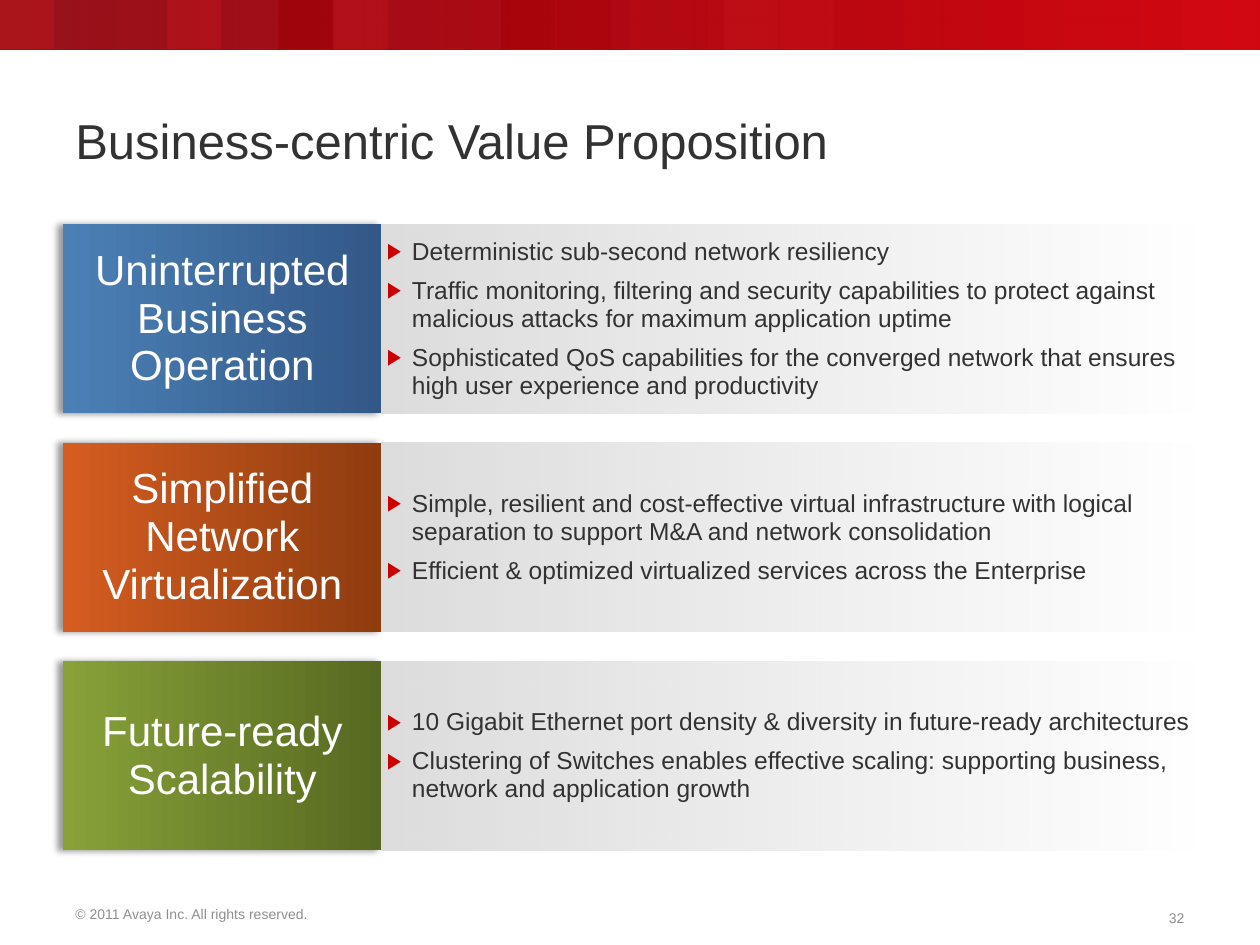
from lxml import etree
from pptx import Presentation
from pptx import util as u
from pptx.dml.color import RGBColor
from pptx.enum import shapes, text
from pptx.oxml import ns

FONT = "Arial"
DARK, GREY, WHITE, PALE = "323232", "8F8F8F", "FFFFFF", "DDDDDD"
BRIGHT_RED, DEEP_RED, BULLET_RED = "FF4747", "990000", "CC0000"

ROWS = [
    ("Uninterrupted Business Operation", "4B80B6", "325887", [
        "Deterministic sub-second network resiliency",
        "Traffic monitoring, filtering and security capabilities to protect against "
        "malicious attacks for maximum application uptime",
        "Sophisticated QoS capabilities for the converged network that ensures "
        "high user experience and productivity"]),
    ("Simplified Network Virtualization", "D55D21", "8F3C0F", [
        "Simple, resilient and cost-effective virtual infrastructure with logical "
        "separation to support M&A and network consolidation",
        "Efficient & optimized virtualized services across the Enterprise"]),
    ("Future-ready Scalability", "87A239", "576820", [
        "10 Gigabit Ethernet port density & diversity in future-ready architectures",
        "Clustering of Switches enables effective scaling: supporting business, "
        "network and application growth"]),
]


def rgb(value):
    return RGBColor.from_string(value)


def add_element(parent, tag, **attributes):
    return etree.SubElement(parent, ns.qn(tag), attributes)


def add_rect(s, box):
    sp = s.shapes.add_shape(shapes.MSO_SHAPE.RECTANGLE, *map(u.Inches, box))
    sp.shadow.inherit = False
    sp.line.fill.background()
    return sp


def solid_rect(s, box, color):
    sp = add_rect(s, box)
    sp.fill.solid()
    sp.fill.fore_color.rgb = rgb(color)


def gradient_rect(s, box, start, end, opacity=(100, 100)):
    sp = add_rect(s, box)
    sp.fill.gradient()
    sp.fill.gradient_angle = 0
    for stop, color, percent in zip(sp.fill.gradient_stops, (start, end), opacity):
        stop.color.rgb = rgb(color)
    for clr, percent in zip(sp._element.spPr.iter(ns.qn("a:srgbClr")), opacity):
        if percent < 100:
            add_element(clr, "a:alpha", val=str(percent * 1000))
    return sp


def add_shadow(sp):
    effects = sp._element.spPr.find(ns.qn("a:effectLst"))
    shadow = add_element(effects, "a:outerShdw", blurRad=str(u.Pt(4)),
                         dist=str(u.Pt(3)), dir="10800000", rotWithShape="0")
    clr = add_element(shadow, "a:srgbClr", val="000000")
    add_element(clr, "a:alpha", val="40000")


def add_bullet(p):
    pPr = p._p.get_or_add_pPr()
    pPr.set("marL", str(u.Inches(0.2)))
    pPr.set("indent", str(u.Inches(-0.2)))
    add_element(add_element(pPr, "a:buClr"), "a:srgbClr", val=BULLET_RED)
    add_element(pPr, "a:buSzPct", val="90000")
    add_element(pPr, "a:buFont", typeface=FONT)
    add_element(pPr, "a:buChar", char="▶")


def write(sp, lines, size, color, align=text.PP_ALIGN.LEFT, spacing=0.9,
          anchor=text.MSO_ANCHOR.MIDDLE, inset=None, wrap=True, bullets=False):
    tf = sp.text_frame
    tf.word_wrap = wrap
    tf.vertical_anchor = anchor
    if inset is not None:
        tf.margin_left = tf.margin_top = tf.margin_right = tf.margin_bottom = u.Inches(inset)
    for i, line in enumerate(lines):
        p = tf.add_paragraph() if i else tf.paragraphs[0]
        if bullets:
            add_bullet(p)
        p.alignment = align
        p.line_spacing = spacing
        if i:
            p.space_before = u.Pt(size * 0.45)
        r = p.add_run()
        r.text = line
        r.font.name = FONT
        r.font.size = u.Pt(size)
        r.font.color.rgb = rgb(color)


def add_label(s, box, line, size, color, **options):
    sp = s.shapes.add_textbox(*map(u.Inches, box))
    write(sp, [line], size, color, **options)


def add_banner(s, box):
    left, top, width, height = box
    gradient_rect(s, box, "91050F", "D10811", (76, 100))
    tiles = {14: BRIGHT_RED, 13: BRIGHT_RED, 10: DEEP_RED, 9: DEEP_RED,
             6: BRIGHT_RED, 5: DEEP_RED, 3: BRIGHT_RED, 0: BRIGHT_RED}
    for column, color in tiles.items():
        solid_rect(s, (left + column * 0.442, top, 0.43, height), color)
    gradient_rect(s, box, "91050F", "D10811", (76, 100))


def add_row(s, box, heading, start, end, points):
    left, top, width, height = box
    head_width = 2.53
    head = gradient_rect(s, (left, top, head_width, height), start, end)
    add_shadow(head)
    write(head, [heading], 24, WHITE, align=text.PP_ALIGN.CENTER, spacing=0.95, inset=0.04)
    body = gradient_rect(s, (left + head_width, top, width - head_width, height),
                         PALE, PALE, (100, 0))
    write(body, points, 14, DARK, spacing=0.95, inset=0.04, bullets=True)


def add_rows(s, box):
    left, top, width, height = box
    row_height = 1.5
    pitch = (height - row_height) / (len(ROWS) - 1)
    for i, row in enumerate(ROWS):
        add_row(s, (left, top + i * pitch, width, row_height), *row)


def add_footer(s, box):
    left, top, width, height = box
    add_label(s, (left, top, 2.09, height), "© 2011 Avaya Inc. All rights reserved.",
              8, GREY, wrap=False)
    add_label(s, (left + width - 0.34, top + 0.03, 0.34, height), "32", 8, GREY,
              align=text.PP_ALIGN.RIGHT, wrap=False)


def main():
    prs = Presentation()
    prs.slide_width, prs.slide_height = u.Inches(10), u.Inches(7.5)
    s = prs.slides.add_slide(prs.slide_layouts[6])
    add_banner(s, (0, -0.01, 10, 0.4))
    add_label(s, (0.5, 0.48, 9, 0.92), "Business-centric Value Proposition", 28, DARK,
              anchor=text.MSO_ANCHOR.BOTTOM)
    add_rows(s, (0.5, 1.78, 9, 4.97))
    add_footer(s, (0.5, 7.15, 9, 0.22))
    prs.save("out.pptx")


if __name__ == "__main__":
    main()
